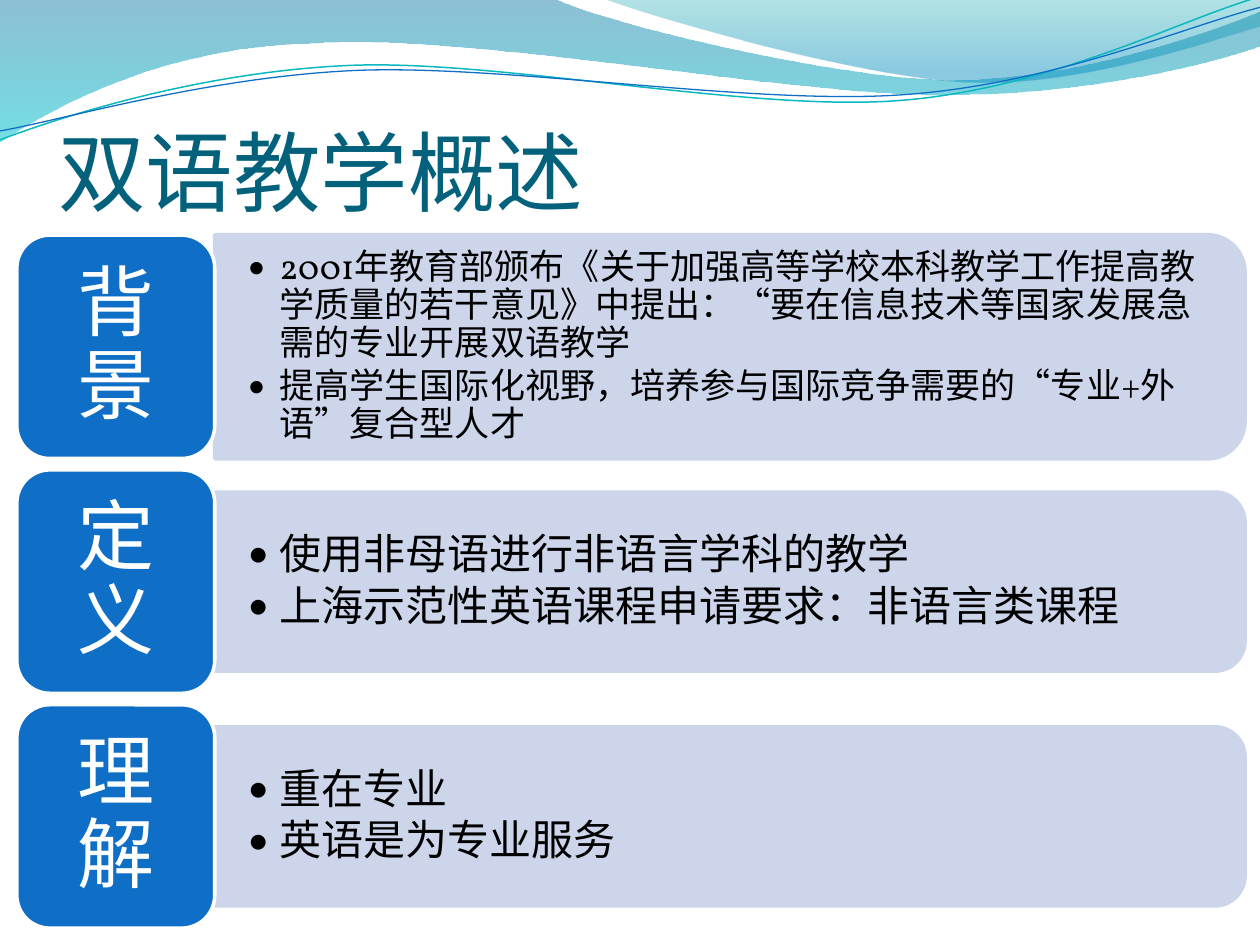
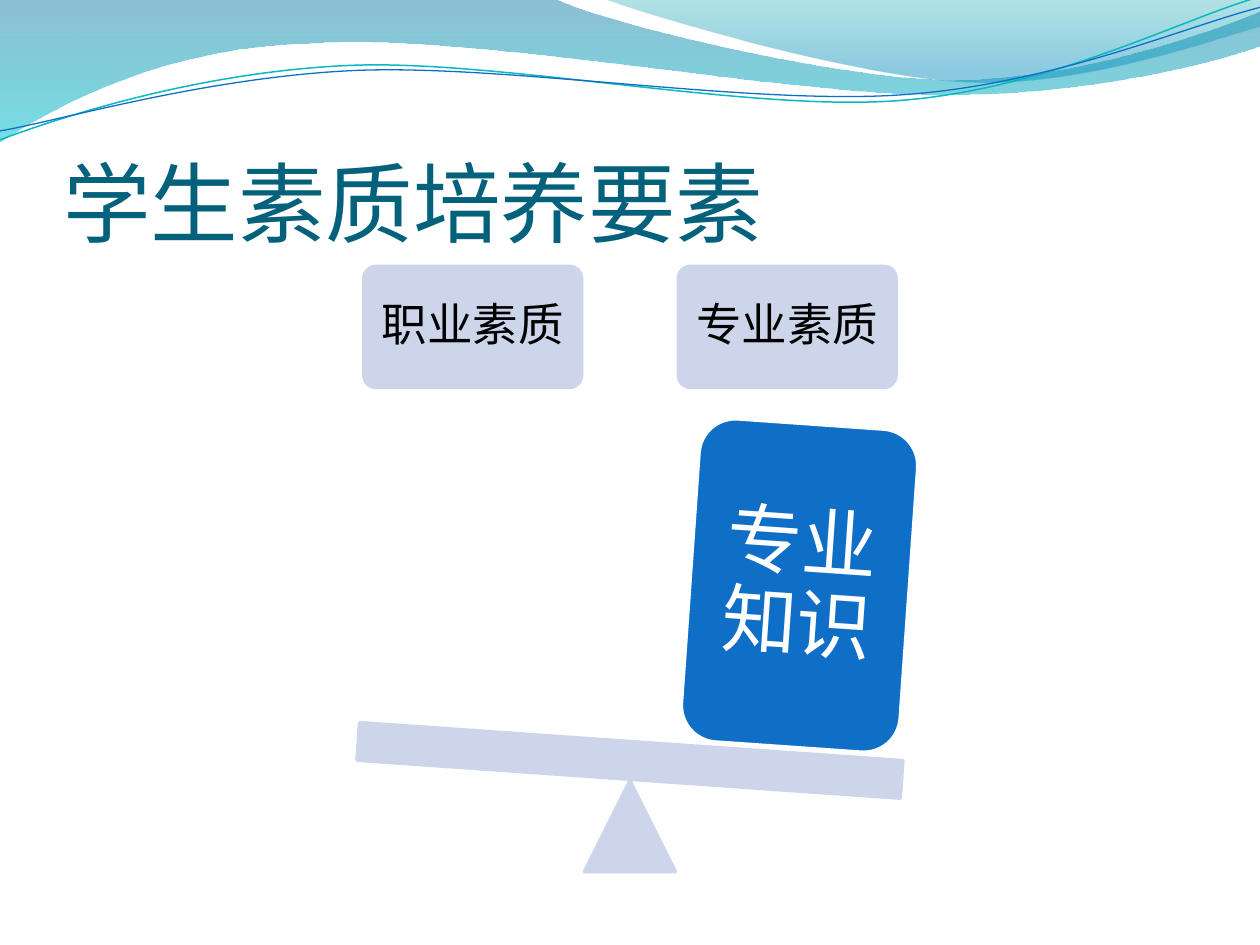
from collections import namedtuple

from lxml import etree
from pptx import Presentation
from pptx.dml.color import RGBColor
from pptx.enum.lang import MSO_LANGUAGE_ID as Language
from pptx.enum.shapes import MSO_SHAPE as Shape
from pptx.enum.text import MSO_ANCHOR as Anchor, MSO_AUTO_SIZE as AutoSize, PP_ALIGN as Align
from pptx.oxml.ns import qn
from pptx.util import Cm, Pt

BLUE = RGBColor(0x0F, 0x6F, 0xC6)
TEAL = RGBColor(0x0A, 0xB8, 0xBF)
PALE = RGBColor(0xCC, 0xD5, 0xEA)
TITLE_COLOR = RGBColor(0x04, 0x61, 0x7B)
BLACK = RGBColor(0, 0, 0)
WHITE = RGBColor(0xFF, 0xFF, 0xFF)
TITLE_FONT = "Calibri"
BODY_FONT = "Vollkorn"
TILT = 4

# All lengths below are centimetres.
Box = namedtuple("Box", "left top width height")

# A path starts at a point; two numbers add a line, six add a Bézier curve.
# Each band has its path and its gradient stops: position, colour, opacity.
WAVE_BANDS = [
    ([(0, 0), (11.18, -0.03), (12.09, 0.43, 16.87, 1.6, 19.25, 1.6),
      (21.67, 1.6, 24.33, 0.66, 25.4, 0.23), (25.43, 0.91),
      (24.97, 1.12, 22.1, 1.93, 18.95, 1.91),
      (15.8, 1.91, 9.7, 0.71, 6.53, 0.86),
      (3.28, 0.91, 1.17, 2.11, -0.03, 2.87)],
     [(0, RGBColor(0x00, 0x74, 0xA1), 45), (1, RGBColor(0x00, 0xC6, 0xCF), 55)]),
    ([(12.17, -0.03), (12.93, 0.28, 17.32, 1.57, 19.53, 1.65),
      (21.74, 1.75, 24.41, 0.81, 25.4, 0.53), (25.4, 0)],
     [(0, RGBColor(0x00, 0xA1, 0xA9), 30), (0.8, RGBColor(0x00, 0x8B, 0xBF), 45)]),
]
WAVE_LINES = [
    ([(0, 2.82), (1.22, 2.36, 4.01, 1.45, 7.04, 1.32),
      (10.03, 1.19, 15.06, 2.26, 18.11, 2.03),
      (21.16, 1.8, 23.83, 0.38, 25.35, -0.05)], TEAL, 0.85),
    ([(0, 2.64), (1.19, 2.44, 4.17, 1.55, 7.19, 1.42),
      (10.24, 1.3, 15.16, 2.13, 18.21, 1.91),
      (21.23, 1.7, 23.9, 0.53, 25.4, 0.15)], BLUE, 0.75),
]

# Heading, panel height, text size, points
OVERVIEW_ROWS = [
    ("背景", 4.52, 20, [
        "2001年教育部颁布《关于加强高等学校本科教学工作提高教学质量的若干意见》中提出：“要在信息技术等国家发展急需的专业开展双语教学",
        "提高学生国际化视野，培养参与国际竞争需要的“专业+外语”复合型人才"]),
    ("定义", 3.61, 24, [
        "使用非母语进行非语言学科的教学",
        "上海示范性英语课程申请要求：非语言类课程"]),
    ("理解", 3.61, 24, ["重在专业", "英语是为专业服务"]),
]


def add_outline(slide, path, close=True):
    """Add a freeform, merging each three control points into one curve."""
    points = [(Cm(x), Cm(y)) for step in path for x, y in zip(step[::2], step[1::2])]
    builder = slide.shapes.build_freeform(*points[0])
    builder.add_line_segments(points[1:], close=close)
    shape = builder.convert_to_shape()
    shape.shadow.inherit = False
    segments = iter(list(shape._element.spPr.iter(qn("a:lnTo"))))
    for step in path[1:]:
        first = next(segments)
        if len(step) == 6:
            curve = etree.Element(qn("a:cubicBezTo"))
            first.addprevious(curve)
            for segment in (first, next(segments), next(segments)):
                curve.append(segment[0])
                segment.getparent().remove(segment)
    return shape


def paint(shape, fill, line):
    shape.shadow.inherit = False
    shape.fill.solid()
    shape.fill.fore_color.rgb = fill
    shape.line.color.rgb = line
    shape.line.width = Pt(2)


def add_box_shape(slide, kind, box, fill=PALE, line=PALE, rotation=0, corner=None):
    shape = slide.shapes.add_shape(kind, *map(Cm, box))
    paint(shape, fill, line)
    shape.rotation = rotation
    if corner is not None:
        shape.adjustments[0] = corner
    return shape


def add_run(paragraph, text, size, color, font=BODY_FONT):
    run = paragraph.add_run()
    run.text = text
    run.font.name = font
    run.font.size = Pt(size)
    run.font.color.rgb = color
    run.font.language_id = Language.SIMPLIFIED_CHINESE


def set_frame(shape, left, top, right, bottom, anchor=Anchor.MIDDLE):
    frame = shape.text_frame
    frame.word_wrap = True
    frame.auto_size = AutoSize.NONE
    frame.vertical_anchor = anchor
    frame.margin_left, frame.margin_top = Cm(left), Cm(top)
    frame.margin_right, frame.margin_bottom = Cm(right), Cm(bottom)
    return frame


def add_label(shape, text, size, color, side, end):
    paragraph = set_frame(shape, side, end, side, end).paragraphs[0]
    paragraph.alignment = Align.CENTER
    paragraph.line_spacing = 0.9
    add_run(paragraph, text, size, color)


def add_bullets(shape, items, size):
    frame = set_frame(shape, 0.67, 0.53, 0.9, 0.53)
    for index, item in enumerate(items):
        paragraph = frame.add_paragraph() if index else frame.paragraphs[0]
        paragraph.alignment = Align.LEFT
        paragraph.line_spacing = 0.9
        paragraph.space_after = Pt(size * 0.15)
        properties = paragraph._p.get_or_add_pPr()
        properties.set("marL", str(Cm(0.64)))
        properties.set("indent", str(Cm(-0.64)))
        etree.SubElement(properties, qn("a:buFont")).set("typeface", TITLE_FONT)
        etree.SubElement(properties, qn("a:buChar")).set("char", "•")
        add_run(paragraph, item, size, BLACK)


def add_waves(slide):
    for path, stops in WAVE_BANDS:
        band = add_outline(slide, path)
        band.fill.gradient()
        band.fill.gradient_angle = 270
        for stop, (position, color, _) in zip(band.fill.gradient_stops, stops):
            stop.position = position
            stop.color.rgb = color
        colors = list(band._element.spPr.iter(qn("a:srgbClr")))
        for color, (_, _, opacity) in zip(colors, stops):
            etree.SubElement(color, qn("a:alpha")).set("val", str(opacity * 1000))
        band.line.fill.background()
    for path, color, width in WAVE_LINES:
        wave = add_outline(slide, path, close=False)
        wave.fill.background()
        wave.line.color.rgb = color
        wave.line.width = Pt(width)


def add_titled_slide(presentation, title, left, top):
    slide = presentation.slides.add_slide(presentation.slide_layouts[5])
    add_waves(slide)
    shape = slide.shapes.title
    shape.left, shape.top, shape.width, shape.height = map(Cm, (left, top, 22.86, 3.18))
    paragraph = set_frame(shape, 0, 0.13, 0, 0, Anchor.BOTTOM).paragraphs[0]
    paragraph.alignment = Align.LEFT
    add_run(paragraph, title, 50, TITLE_COLOR, TITLE_FONT)
    return slide


def add_panel(slide, box):
    """Add a pale panel whose right corners are round."""
    right, bottom = box.left + box.width, box.top + box.height
    radius = box.height / 6
    pull = radius * 0.45
    panel = add_outline(slide, [
        (box.left, box.top), (right - radius, box.top),
        (right - pull, box.top, right, box.top + pull, right, box.top + radius),
        (right, bottom - radius),
        (right, bottom - pull, right - pull, bottom, right - radius, bottom),
        (box.left, bottom)])
    paint(panel, PALE, PALE)
    return panel


def add_overview_row(slide, box, heading, panel_height, size, items):
    tab_width = 3.99
    panel_box = Box(box.left + tab_width, box.top + (box.height - panel_height) / 2,
                    box.width - tab_width, panel_height)
    add_bullets(add_panel(slide, panel_box), items, size)
    tab = add_box_shape(slide, Shape.ROUNDED_RECTANGLE, box._replace(width=tab_width),
                        BLUE, WHITE, corner=1 / 6)
    add_label(tab, heading, 44, WHITE, 0.47, 0.24)


def add_overview(slide, box):
    gap = 0.23
    height = (box.height - gap * (len(OVERVIEW_ROWS) - 1)) / len(OVERVIEW_ROWS)
    for index, row in enumerate(OVERVIEW_ROWS):
        top = box.top + index * (height + gap)
        add_overview_row(slide, Box(box.left, top, box.width, height), *row)


def add_balance(slide, box):
    """Draw a seesaw that tips right, with a card above each arm."""
    card_width = 4.39
    center = box.left + box.width / 2
    for side, text in ((-1, "职业素质"), (1, "专业素质")):
        card_box = Box(center + side * 3.17 - card_width / 2, box.top, card_width, 2.44)
        card = add_box_shape(slide, Shape.ROUNDED_RECTANGLE, card_box, corner=0.1)
        add_label(card, text, 26, BLACK, 0.26, 0.28)

    foot = 1.83
    add_box_shape(slide, Shape.ISOSCELES_TRIANGLE,
                  Box(center - foot / 2, box.top + box.height - foot, foot, foot))
    add_box_shape(slide, Shape.RECTANGLE,
                  Box(box.left, box.top + 9.58, box.width, 0.76), rotation=TILT)
    weight = add_box_shape(slide, Shape.ROUNDED_RECTANGLE,
                           Box(center + 1.21, box.top + 3.17, 4.42, 6.53),
                           BLUE, WHITE, TILT, 1 / 6)
    add_label(weight, "专业知识", 43, WHITE, 0.42, 0.44)


def main():
    presentation = Presentation()
    presentation.slide_width, presentation.slide_height = Cm(25.4), Cm(19.05)
    overview = add_titled_slide(presentation, "双语教学概述", 1.17, 1.32)
    add_overview(overview, Box(0.34, 4.74, 24.76, 13.97))
    qualities = add_titled_slide(presentation, "学生素质培养要素", 1.27, 1.95)
    add_balance(qualities, Box(7.21, 5.37, 10.98, 12.2))
    presentation.save("out.pptx")


if __name__ == "__main__":
    main()
